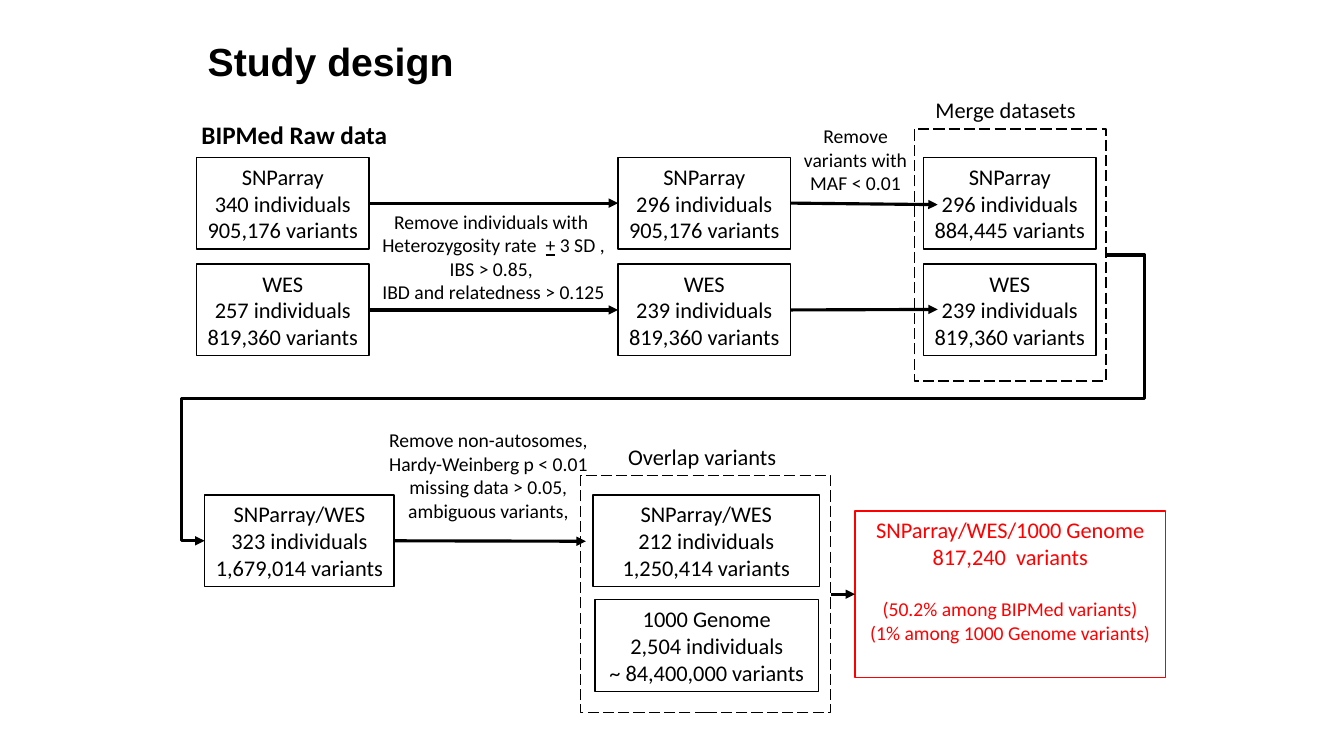
from lxml import etree
from pptx import Presentation
from pptx.dml.color import RGBColor
from pptx.enum.dml import MSO_LINE
from pptx.enum.shapes import MSO_CONNECTOR, MSO_SHAPE
from pptx.enum.text import MSO_ANCHOR, MSO_AUTO_SIZE, PP_ALIGN
from pptx.oxml.ns import qn
from pptx.util import Inches, Pt

RECT = MSO_SHAPE.RECTANGLE
STRAIGHT, ELBOW = MSO_CONNECTOR.STRAIGHT, MSO_CONNECTOR.ELBOW
LEFT, CENTER = PP_ALIGN.LEFT, PP_ALIGN.CENTER
TOP, MIDDLE = MSO_ANCHOR.TOP, MSO_ANCHOR.MIDDLE
LEFT_SIDE, RIGHT_SIDE = 1, 3

COLORS = {"ink": "000000", "paper": "FFFFFF", "result": "FF0000"}
BOX_H = 0.91
ROW_Y = {"array": 1.56, "wes": 2.62, "merged": 4.91, "genome": 5.95}

BOXES = {
    "raw array": (1.95, "array", 1.71, ["SNParray", "340 individuals", "905,176 variants"]),
    "raw wes": (1.95, "wes", 1.71, ["WES", "257 individuals", "819,360 variants"]),
    "clean array": (6.13, "array", 1.71, ["SNParray", "296 individuals", "905,176 variants"]),
    "clean wes": (6.13, "wes", 1.71, ["WES", "239 individuals", "819,360 variants"]),
    "common array": (9.16, "array", 1.71, ["SNParray", "296 individuals", "884,445 variants"]),
    "common wes": (9.16, "wes", 1.71, ["WES", "239 individuals", "819,360 variants"]),
    "merged": (2.03, "merged", 1.88, ["SNParray/WES", "323 individuals", "1,679,014 variants"]),
    "filtered": (5.88, "merged", 2.25, ["SNParray/WES", "212 individuals", "1,250,414 variants"]),
    "genome": (5.9, "genome", 2.22, ["1000 Genome", "2,504 individuals", "~ 84,400,000 variants"]),
}
FRAMES = {"merge": (9.07, 1.28, 1.9, 2.5), "overlap": (5.76, 4.72, 2.48, 2.35)}
RESULT_AT = (8.48, 5.07, 3.08, 1.65)
RESULT = ["SNParray/WES/1000 Genome", "817,240  variants"]
SHARES = ["(50.2% among BIPMed variants)", "(1% among 1000 Genome variants)"]

LABELS = [
    ((1.9, 1.13, 2.06, 0.4), ["BIPMed Raw data"], dict(size=18, bold=True, align=LEFT)),
    ((9.11, 0.9, 1.73, 0.37), ["Merge datasets"], dict(size=16)),
    ((6.1, 4.35, 1.73, 0.37), ["Overlap variants"], dict(size=16)),
    ((3.68, 2.03, 2.43, 1.04),
     ["Remove individuals with ", ("Heterozygosity rate  ", "+", " 3 SD ,"),
      "IBS > 0.85, ", "IBD and relatedness > 0.125"], dict(size=14)),
    ((7.79, 1.18, 1.39, 0.81), ["Remove variants with MAF < 0.01"], dict(size=14, wrap=True)),
    ((3.63, 4.2, 2.43, 1.04),
     ["Remove non-autosomes,", "Hardy-Weinberg p < 0.01", "missing data > 0.05,",
      "ambiguous variants,"], dict(size=14)),
]
LINKS = [("raw array", "clean array"), ("raw wes", "clean wes"), ("overlap", "result")]
OPEN_LINKS = [("clean array", 9.3, 2.03), ("clean wes", 9.3, 3.07), ("merged", 5.81, 5.37)]
ELBOW_ADJUST = {"adj1": -4300, "adj2": 50100, "adj3": 102600}


def color(name):
    return RGBColor.from_string(COLORS[name])


def write(tf, lines, size=16, bold=False, ink="ink", font="Calibri",
          align=CENTER, anchor=TOP, wrap=False):
    tf.word_wrap = wrap
    tf.auto_size = MSO_AUTO_SIZE.NONE
    tf.vertical_anchor = anchor
    for i, line in enumerate(lines):
        p = tf.paragraphs[0] if i == 0 else tf.add_paragraph()
        p.alignment = align
        for part in (line,) if isinstance(line, str) else line:
            r = p.add_run()
            r.text = part
            r.font.name, r.font.size, r.font.bold = font, Pt(size), bold
            r.font.color.rgb = color(ink)
            if part == "+":
                r.font.underline = True


def add_box(s, at, ink="ink", dashed=False):
    sp = s.shapes.add_shape(RECT, *map(Inches, at))
    sp.shadow.inherit = False
    sp.line.color.rgb = color(ink)
    sp.line.width = Pt(1)
    if dashed:
        sp.fill.background()
        sp.line.dash_style = MSO_LINE.LONG_DASH
    else:
        sp.fill.solid()
        sp.fill.fore_color.rgb = color("paper")
    return sp


def add_arrow(s, start, end=None, point=(0, 0), kind=STRAIGHT):
    x, y = map(Inches, point)
    c = s.shapes.add_connector(kind, start.left + start.width, start.top + start.height // 2, x, y)
    c.begin_connect(start, RIGHT_SIDE)
    if end is not None:
        c.end_connect(end, LEFT_SIDE)
    c.line.color.rgb = color("ink")
    c.line.width = Pt(2.25)
    etree.SubElement(c.line._get_or_add_ln(), qn("a:tailEnd"), type="triangle")
    etree.SubElement(c._element.spPr, qn("a:effectLst"))
    return c


def main():
    prs = Presentation()
    prs.slide_width, prs.slide_height = Inches(13.33), Inches(7.5)
    s = prs.slides.add_slide(prs.slide_layouts[5])

    title = s.shapes.title
    title.left, title.top, title.width, title.height = map(Inches, (1.96, 0.32, 2.67, 0.57))
    write(title.text_frame, ["Study design"], size=28, bold=True, font="Arial", align=LEFT)

    shapes = {}
    for name, (x, row, w, lines) in BOXES.items():
        shapes[name] = add_box(s, (x, ROW_Y[row], w, BOX_H))
        write(shapes[name].text_frame, lines, anchor=MIDDLE)
    for name, at in FRAMES.items():
        shapes[name] = add_box(s, at, dashed=True)

    shapes["result"] = add_box(s, RESULT_AT, ink="result")
    tf = shapes["result"].text_frame
    write(tf, RESULT + SHARES, ink="result", wrap=True)
    shares = tf.paragraphs[len(RESULT):]
    shares[0].space_before = Pt(19.5)
    for p in shares:
        p.runs[0].font.size = Pt(14)

    for at, lines, style in LABELS:
        write(s.shapes.add_textbox(*map(Inches, at)).text_frame, lines, **style)

    for start, end in LINKS:
        add_arrow(s, shapes[start], shapes[end])
    for start, x, y in OPEN_LINKS:
        add_arrow(s, shapes[start], point=(x, y))

    turn = add_arrow(s, shapes["merge"], shapes["merged"], point=(2.03, 5.37), kind=ELBOW)
    geom = turn._element.spPr.find(qn("a:prstGeom"))
    geom.set("prst", "bentConnector5")
    guides = geom.find(qn("a:avLst"))
    for name, value in ELBOW_ADJUST.items():
        etree.SubElement(guides, qn("a:gd"), name=name, fmla=f"val {value}")

    prs.save("out.pptx")


if __name__ == "__main__":
    main()
